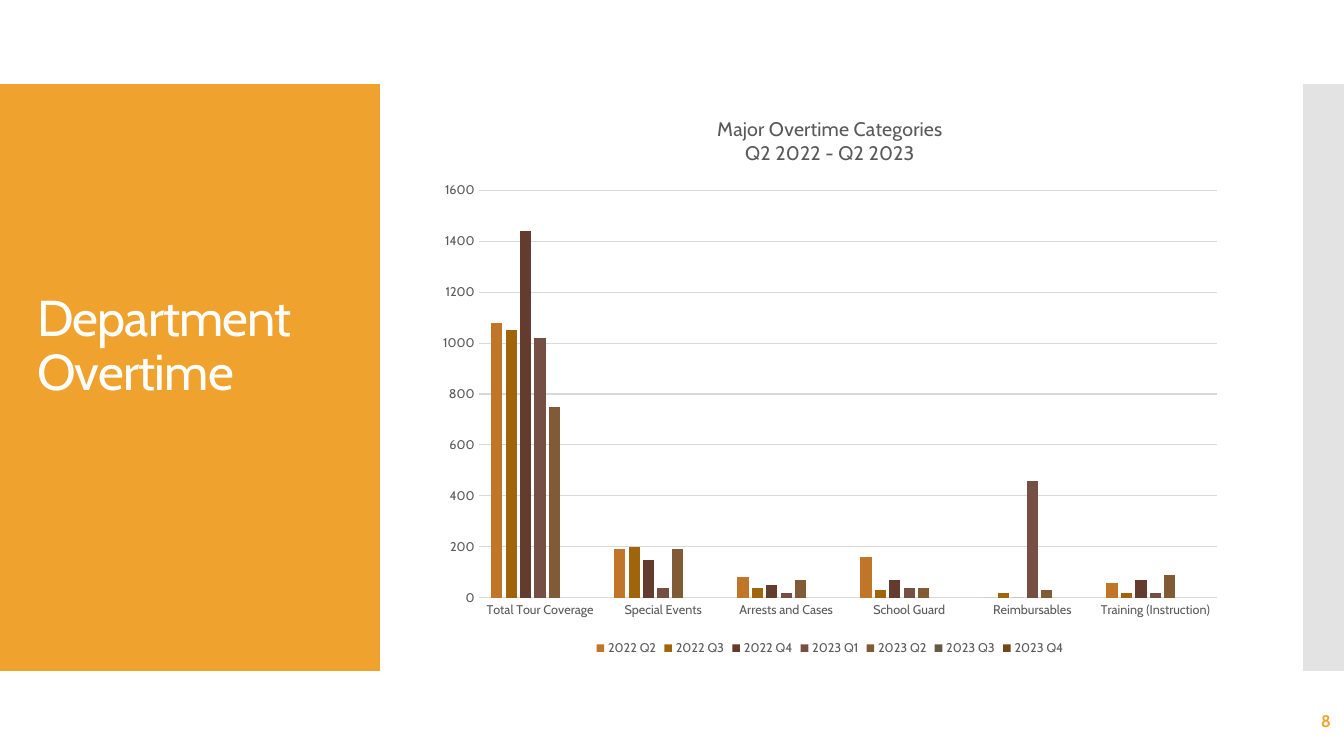
"""Build the Department Overtime slide with its clustered column chart."""
from lxml import etree
from pptx import Presentation
from pptx import util as u
from pptx.chart import data
from pptx.dml.color import RGBColor
from pptx.enum import chart as ch, shapes, text
from pptx.oxml.ns import qn

TITLE = "Department Overtime"
PAGE = "8"
HEAD = "Major Overtime Categories\nQ2 2022 - Q2 2023"
CATS = ["Total Tour Coverage", "Special Events", "Arrests and Cases",
        "School Guard", "Reimbursables", "Training (Instruction)"]
BLANK = [None] * len(CATS)
SERIES = [
    ("2022 Q2", "C17529", [1080, 190, 80, 160, 0, 60]),
    ("2022 Q3", "A0640B", [1050, 200, 40, 30, 20, 20]),
    ("2022 Q4", "633C2F", [1440, 150, 50, 70, 0, 70]),
    ("2023 Q1", "754E44", [1020, 40, 20, 40, 460, 20]),
    ("2023 Q2", "815B35", [750, 190, 70, 40, 30, 90]),
    ("2023 Q3", "635B43", BLANK),
    ("2023 Q4", "744619", BLANK),
]
THEME = {
    "font": "Cabin", "accent": "F0A22E", "side": "C8C8C8", "white": "FFFFFF",
    "ink": "595959", "grid": "D9D9D9",
    "title": 36, "head": 14, "page": 12, "label": 9,
}
BOX = {
    "slide": (0, 0, 1344, 756),
    "panel": (0, 84, 380, 587),
    "side": (1303, 84, 41, 587),
    "title": (27, 124, 325, 507),
    "page": (1173, 701, 168, 40),
    "chart": (427, 96, 806, 564),
}
PX = 914400 / 100.8


def emu(px):
    return u.Emu(round(px * PX))


def place(name):
    return [emu(px) for px in BOX[name]]


def put(item, **vals):
    for key, val in vals.items():
        setattr(item, key, val)


def tint(name):
    return RGBColor.from_string(THEME.get(name, name))


def style(font, size, color, bold=False):
    put(font, name=THEME["font"], size=u.Pt(THEME[size]), bold=bold)
    font.color.rgb = tint(color)


def paint(fmt, color):
    fmt.fill.solid()
    fmt.fill.fore_color.rgb = tint(color)


def band(slide, name, color):
    shape = slide.shapes.add_shape(shapes.MSO_SHAPE.RECTANGLE, *place(name))
    shape.shadow.inherit = False
    paint(shape, color)
    shape.line.fill.background()
    return shape


def add_bands(slide):
    band(slide, "panel", "accent")
    side = band(slide, "side", "side")
    color = side.fill._xPr.find(qn("a:solidFill"))[0]
    etree.SubElement(color, qn("a:alpha"), val="50000")


def add_title(slide):
    title = slide.shapes.title
    slide.shapes._spTree.append(title._element)
    put(title, **dict(zip(("left", "top", "width", "height"), place("title"))))
    frame = title.text_frame
    frame.text = TITLE
    put(frame, word_wrap=True, auto_size=text.MSO_AUTO_SIZE.NONE,
        vertical_anchor=text.MSO_ANCHOR.MIDDLE, margin_bottom=emu(66))
    para = frame.paragraphs[0]
    put(para, alignment=text.PP_ALIGN.LEFT, line_spacing=0.9)
    run = para.runs[0]
    style(run.font, "title", "white")
    run._r.get_or_add_rPr().set("spc", "-60")


def add_page(slide):
    frame = slide.shapes.add_textbox(*place("page")).text_frame
    frame.text = PAGE
    put(frame, word_wrap=True, vertical_anchor=text.MSO_ANCHOR.MIDDLE)
    para = frame.paragraphs[0]
    para.alignment = text.PP_ALIGN.RIGHT
    style(para.runs[0].font, "page", "accent", True)


def rule(line):
    line.color.rgb = tint("grid")
    line.width = u.Pt(0.75)


def add_chart(slide):
    table = data.CategoryChartData()
    table.categories = CATS
    for name, _, vals in SERIES:
        table.add_series(name, vals)
    kind = ch.XL_CHART_TYPE.COLUMN_CLUSTERED
    chart = slide.shapes.add_chart(kind, *place("chart"), table).chart
    style(chart.font, "label", "ink")

    frame = chart.chart_title.text_frame
    frame.text = HEAD
    for para in frame.paragraphs:
        style(para.runs[0].font, "head", "ink")

    chart.has_legend = True
    put(chart.legend, position=ch.XL_LEGEND_POSITION.BOTTOM,
        include_in_layout=False)
    style(chart.legend.font, "label", "ink")

    cat, val = chart.category_axis, chart.value_axis
    for axis in (cat, val):
        put(axis, major_tick_mark=ch.XL_TICK_MARK.NONE,
            minor_tick_mark=ch.XL_TICK_MARK.NONE)
        style(axis.tick_labels.font, "label", "ink")
    put(val, minimum_scale=0, maximum_scale=1600, major_unit=200,
        has_major_gridlines=True)
    rule(cat.format.line)
    rule(val.major_gridlines.format.line)
    val.format.line.fill.background()

    plot = chart.plots[0]
    put(plot, gap_width=219, overlap=-27, vary_by_categories=False)
    for bars, (_, color, _) in zip(plot.series, SERIES):
        paint(bars.format, color)


def main():
    deck = Presentation()
    wide, high = place("slide")[2:]
    put(deck, slide_width=wide, slide_height=high)
    slide = deck.slides.add_slide(deck.slide_layouts[5])
    add_bands(slide)
    add_title(slide)
    add_page(slide)
    add_chart(slide)
    deck.save("out.pptx")


if __name__ == "__main__":
    main()
